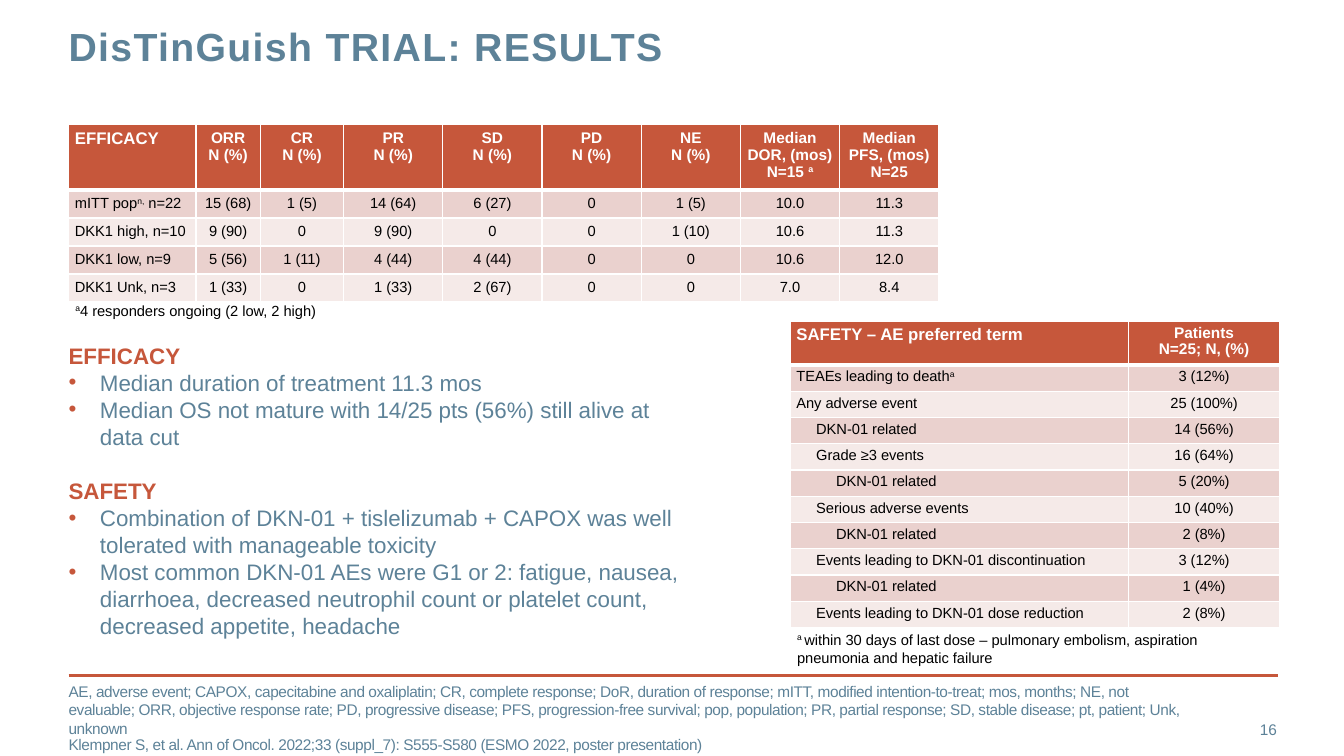
"""Build the DisTinGuish trial results slide."""
from lxml import etree
from pptx import Presentation
from pptx import util as u
from pptx.dml.color import RGBColor
from pptx.enum import shapes, text
from pptx.oxml import ns

ORANGE, BLUE, WHITE, BLACK = "C6573B", "5D8298", "FFFFFF", "000000"
BANDS = ["EAD1CE", "F5EAE8"]
LEFT, CENTER, RIGHT = text.PP_ALIGN.LEFT, text.PP_ALIGN.CENTER, text.PP_ALIGN.RIGHT


def color(value):
    return RGBColor.from_string(value)


def add_element(parent, tag, **attributes):
    element = etree.SubElement(parent, ns.qn(tag))
    for name, value in attributes.items():
        element.set(name, str(value))
    return element


class SlideBuilder:
    font = "Arial"

    def __init__(self, presentation):
        self.slide = presentation.slides.add_slide(presentation.slide_layouts[5])

    def add_runs(self, paragraph, content, size, fill, bold=False, spacing=0, align=LEFT, line=None):
        paragraph.alignment = align
        if line:
            paragraph.line_spacing = line
        for part, piece in enumerate(content.split("^")):
            for row, words in enumerate(piece.split("\n")):
                if row:
                    paragraph.add_line_break()
                if not words:
                    continue
                run = paragraph.add_run()
                run.text = words
                run.font.name, run.font.size, run.font.bold = self.font, u.Pt(size), bold
                run.font.color.rgb = color(fill)
                properties = run._r.get_or_add_rPr()
                if part % 2:
                    properties.set("baseline", "30000")
                if spacing:
                    properties.set("spc", str(round(spacing * 100)))

    def indent(self, paragraph, margin, first, bullet=None):
        properties = paragraph._p.get_or_add_pPr()
        properties.set("marL", str(u.Cm(margin)))
        properties.set("indent", str(u.Cm(first)))
        if bullet:
            bullet_color = add_element(properties, "a:buClr")
            add_element(bullet_color, "a:srgbClr", val=bullet)
            add_element(properties, "a:buFont", typeface=self.font)
            add_element(properties, "a:buChar", char="•")

    def place(self, shape, box):
        shape.left, shape.top, shape.width, shape.height = map(u.Cm, box)

    def title(self, content, box):
        shape = self.slide.shapes.title
        self.place(shape, box)
        frame = shape.text_frame
        frame.margin_left = frame.margin_top = frame.margin_right = frame.margin_bottom = 0
        frame.vertical_anchor = text.MSO_ANCHOR.TOP
        frame.auto_size = text.MSO_AUTO_SIZE.NONE
        self.add_runs(frame.paragraphs[0], content, 28, BLUE, True, 1, line=u.Pt(30))

    def frame(self, box, margins=(0.25, 0.13), wrap=True, anchor=text.MSO_ANCHOR.TOP):
        frame = self.slide.shapes.add_textbox(*map(u.Cm, box)).text_frame
        frame.word_wrap, frame.vertical_anchor = wrap, anchor
        frame.margin_left = frame.margin_right = u.Cm(margins[0])
        frame.margin_top = frame.margin_bottom = u.Cm(margins[1])
        return frame

    def note(self, lines, box, size, fill, margins=(0.25, 0.13), wrap=True,
             anchor=text.MSO_ANCHOR.TOP, **style):
        frame = self.frame(box, margins, wrap, anchor)
        for index, (content, pitch) in enumerate(lines):
            paragraph = frame.add_paragraph() if index else frame.paragraphs[0]
            self.add_runs(paragraph, content, size, fill, line=pitch and u.Pt(pitch), **style)

    def findings(self, sections, box, size, pitch):
        frame = self.frame(box, (0, 0.13))
        for index, (heading, points) in enumerate(sections):
            paragraph = frame.add_paragraph() if index else frame.paragraphs[0]
            if index:
                paragraph.space_before = u.Pt(pitch)
            self.add_runs(paragraph, heading, size, ORANGE, True, line=u.Pt(pitch))
            for point in points:
                paragraph = frame.add_paragraph()
                self.indent(paragraph, 0.79, -0.79, ORANGE)
                self.add_runs(paragraph, point, size, BLUE, line=u.Pt(pitch))

    def rule(self, left, right, top):
        line = self.slide.shapes.add_connector(
            shapes.MSO_CONNECTOR.STRAIGHT, *map(u.Cm, (left, top, right, top)))
        line.line.color.rgb, line.line.width = color(ORANGE), u.Pt(2)
        add_element(line._element.spPr, "a:effectLst")

    def borders(self, cell, row):
        properties = cell._tc.get_or_add_tcPr()
        widths = {"L": 1, "R": 1, "T": 3 if row == 1 else 1, "B": 1 if row else 3}
        for side, width in widths.items():
            border = add_element(properties, f"a:ln{side}", w=u.Pt(width))
            add_element(add_element(border, "a:solidFill"), "a:srgbClr", val=WHITE)

    def table(self, rows, position, widths, heights, levels=None, line=None):
        box = (*position, sum(widths), heights[0] + heights[1] * (len(rows) - 1))
        table = self.slide.shapes.add_table(len(rows), len(widths), *map(u.Cm, box)).table
        for column, width in zip(table.columns, widths):
            column.width = u.Cm(width)
        for r, values in enumerate(rows):
            table.rows[r].height = u.Cm(heights[min(r, 1)])
            for c, value in enumerate(values):
                cell = table.cell(r, c)
                cell.margin_left = cell.margin_right = u.Cm(0.16)
                cell.margin_top = cell.margin_bottom = u.Cm(0.13)
                self.borders(cell, r)
                cell.fill.solid()
                cell.fill.fore_color.rgb = color(BANDS[(r - 1) % 2] if r else ORANGE)
                size = 10.5 if r else 11 if c else 12
                for index, content in enumerate(value.split("|")):
                    frame = cell.text_frame
                    paragraph = frame.add_paragraph() if index else frame.paragraphs[0]
                    if levels and c == 0 and levels[r]:
                        paragraph.level = levels[r]
                        self.indent(paragraph, 1.27 * levels[r], -0.77 * levels[r])
                    self.add_runs(paragraph, content, size, BLACK if r else WHITE, not r,
                                  align=CENTER if c else LEFT, line=line)


def main():
    presentation = Presentation()
    presentation.slide_width, presentation.slide_height = u.Cm(33.87), u.Cm(19.05)
    builder = SlideBuilder(presentation)
    builder.rule(1.73, 32.21, 17.02)
    builder.title("DisTinGuish TRIAL: RESULTS", (1.73, 0.69, 24.28, 2.24))
    builder.note([("16", None)], (30, 17.86, 2.18, 1.02), 11, BLUE, (0, 0),
                 anchor=text.MSO_ANCHOR.MIDDLE, align=RIGHT)
    builder.note([
        ("AE, adverse event; CAPOX, capecitabine and oxaliplatin; CR, complete response; "
         "DoR, duration of response; mITT, modified intention-to-treat; mos, months; NE, not "
         "evaluable; ORR, objective response rate; PD, progressive disease; PFS, "
         "progression-free survival; pop, population; PR, partial response; SD, stable "
         "disease; pt, patient; Unk, unknown", 13),
        ("Klempner S, et al. Ann of Oncol. 2022;33 (suppl_7): S555-S580 "
         "(ESMO 2022, poster presentation)", 11.8),
    ], (1.73, 17.2, 28.27, 1.8), 11, BLUE, (0, 0), spacing=-0.3)

    counts = [f"{name}|N (%)" for name in ("ORR", "CR", "PR", "SD", "PD", "NE")]
    efficacy = [
        ["EFFICACY", *counts, "Median DOR, (mos) N=15 ^a^", "Median PFS, (mos)|N=25"],
        ["mITT pop^n,^ n=22", "15 (68)", "1 (5)", "14 (64)", "6 (27)", "0", "1 (5)", "10.0", "11.3"],
        ["DKK1 high, n=10", "9 (90)", "0", "9 (90)", "0", "0", "1 (10)", "10.6", "11.3"],
        ["DKK1 low, n=9", "5 (56)", "1 (11)", "4 (44)", "4 (44)", "0", "0", "10.6", "12.0"],
        ["DKK1 Unk, n=3", "1 (33)", "0", "1 (33)", "2 (67)", "0", "0", "7.0", "8.4"],
    ]
    builder.table(efficacy, (1.73, 3.13), [3.21, 1.62, 2.1] + [2.5] * 6, (1.54, 0.67))

    safety = [
        (0, "SAFETY – AE preferred term", "Patients|N=25; N, (%)"),
        (0, "TEAEs leading to death^a^", "3 (12%)"),
        (0, "Any adverse event", "25 (100%)"),
        (1, "DKN-01 related", "14 (56%)"),
        (1, "Grade ≥3 events", "16 (64%)"),
        (2, "DKN-01 related", "5 (20%)"),
        (1, "Serious adverse events", "10 (40%)"),
        (2, "DKN-01 related", "2 (8%)"),
        (1, "Events leading to DKN-01 discontinuation", "3 (12%)"),
        (2, "DKN-01 related", "1 (4%)"),
        (1, "Events leading to DKN-01 dose reduction", "2 (8%)"),
    ]
    builder.table([row[1:] for row in safety], (19.91, 8.1), [8.53, 3.81], (1.02, 0.63),
                  [row[0] for row in safety], 0.9)
    builder.note([("^a ^within 30 days of last dose – pulmonary embolism, aspiration\n"
                   "pneumonia and hepatic failure", 12.8)],
                 (19.84, 15.75, 12.34, 1.14), 10.5, BLACK)
    builder.findings([
        ("EFFICACY", ["Median duration of treatment 11.3 mos",
                      "Median OS not mature with 14/25 pts (56%) still alive at \ndata cut"]),
        ("SAFETY", ["Combination of DKN-01 + tislelizumab + CAPOX was well tolerated with "
                    "manageable toxicity",
                    "Most common DKN-01 AEs were G1 or 2: fatigue, nausea, diarrhoea, decreased "
                    "neutrophil count or platelet count, decreased appetite, headache"]),
    ], (1.73, 8.48, 16.23, 7.77), 16, 19.3)
    builder.note([("^a^4 responders ongoing (2 low, 2 high)", None)],
                 (1.65, 7.47, 6.81, 0.71), 10.5, BLACK, wrap=False)
    presentation.save("out.pptx")


if __name__ == "__main__":
    main()
